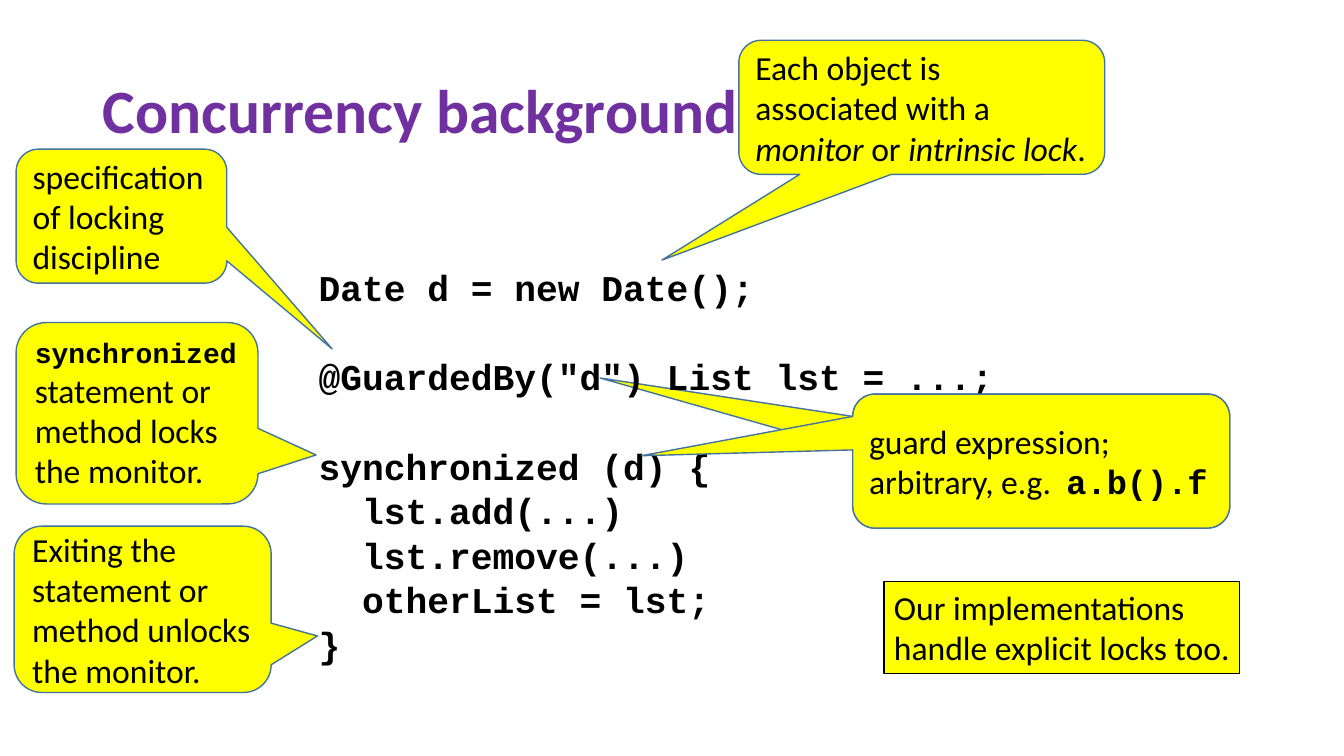
import pptx
import pptx.util
import pptx.dml.color
import pptx.enum.shapes
import pptx.enum.text
import lxml.etree

Pt = pptx.util.Pt
SHAPES = pptx.enum.shapes.MSO_SHAPE
ANCHOR = pptx.enum.text.MSO_ANCHOR
LEFT = pptx.enum.text.PP_ALIGN.LEFT

COLORS = {"title": "7030A0", "text": "000000", "note": "FFFF00", "outline": "43739E"}
PROSE, CODE = "Calibri", "Courier New"
CELL = pptx.util.Inches(0.1)  # the slide is a grid of 133.3 columns by 75 rows
CODE_SIZE = 25.9
CODE_LEADING = 0.7
CODE_GAP = 10
BLANK_LINE = 32
CODE_INDENT = 2 * 0.6 * CODE_SIZE  # two monospaced characters


def color(name):
    return pptx.dml.color.RGBColor.from_string(COLORS[name])


def write(paragraph, text, font=PROSE, size=24, ink="text", bold=False, italic=False):
    run = paragraph.add_run()
    run.text = text
    run.font.name = font
    run.font.size = Pt(size)
    run.font.bold = bold
    run.font.italic = italic
    run.font.color.rgb = color(ink)


deck = pptx.Presentation()
deck.slide_width = int(133.33 * CELL)
deck.slide_height = 75 * CELL
slide = deck.slides.add_slide(deck.slide_layouts[1])
title, code = slide.placeholders

# Title
title.left, title.top, title.width, title.height = (int(n * CELL) for n in (9.2, 4, 115, 14.5))
title.text_frame.vertical_anchor = ANCHOR.MIDDLE
heading = title.text_frame.paragraphs[0]
heading.alignment = LEFT
heading.line_spacing = 0.9
write(heading, "Concurrency background", size=44, ink="title", bold=True)

# Code: (indent level, starts a new block, text)
code_lines = [
    (0, False, "Date d = new Date();"),
    (0, True, '@GuardedBy("d") List lst = ...;'),
    (0, True, "synchronized (d) {"),
    (1, False, "lst.add(...)"),
    (1, False, "lst.remove(...)"),
    (1, False, "otherList = lst;"),
    (0, False, "}"),
]
code.left, code.top, code.width, code.height = (int(n * CELL) for n in (30.6, 21.5, 72.2, 47.6))
code.text_frame.auto_size = pptx.enum.text.MSO_AUTO_SIZE.NONE
code.text_frame.vertical_anchor = ANCHOR.TOP
code.text_frame.margin_top = 6 * CELL
for number, (level, new_block, text) in enumerate(code_lines):
    line = code.text_frame.add_paragraph() if number else code.text_frame.paragraphs[0]
    line.alignment = LEFT
    line.line_spacing = CODE_LEADING
    line.space_before = Pt(0 if number == 0 else CODE_GAP + BLANK_LINE * new_block)
    write(line, text, font=CODE, size=CODE_SIZE, bold=True)
    properties = line._p.get_or_add_pPr()
    properties.set("marL", str(int(Pt(level * CODE_INDENT))))
    properties.set("indent", "0")
    lxml.etree.SubElement(properties, pptx.oxml.ns.qn("a:buNone"))

# Notes: (place in cells, pointer tip or None for a plain box, paragraphs of runs)
mono = {"font": CODE, "bold": True}
italic = {"italic": True}
guard_place = (84.6, 39.1, 37.4, 13.3)
guard_text = [
    [("guard expression;", {})],
    [("arbitrary, e.g.  ", {}), ("a.b().f", mono)],
]
notes = [
    (guard_place, (-1.17, -0.62), guard_text),
    ((73.3, 4, 36.3, 13.3), (-0.71, 1.14), [[
        ("Each object is associated with a ", {}), ("monitor", italic),
        (" or ", {}), ("intrinsic lock", italic), (".", {})]]),
    ((1.6, 32, 24, 18), (0.74, 0.23), [[
        ("synchronized ", {**mono, "size": 20}),
        ("statement or method locks the monitor.", {})]]),
    ((1.4, 52.2, 25.5, 16.5), (0.68, 0.16), [[
        ("Exiting the statement or method unlocks the monitor.", {})]]),
    (guard_place, (-1.06, -0.04), guard_text),
    ((1.6, 14.8, 20.9, 13.3), (1, 0.99), [[
        ("specification of locking discipline", {})]]),
    ((87.7, 57.7, 35.3, 9.1), None, [[
        ("Our implementations handle explicit locks too.", {})]]),
]
drawn_notes = []
for place, tip, paragraphs in notes:
    preset = SHAPES.ROUNDED_RECTANGULAR_CALLOUT if tip else SHAPES.RECTANGLE
    note = slide.shapes.add_shape(preset, *(int(n * CELL) for n in place))
    if tip:
        note.adjustments[0], note.adjustments[1] = tip
    note.shadow.inherit = False
    note.fill.solid()
    note.fill.fore_color.rgb = color("note")
    note.line.color.rgb = color("outline" if tip else "text")
    note.line.width = Pt(1 if tip else 0.75)
    frame = note.text_frame
    frame.word_wrap = True
    frame.vertical_anchor = ANCHOR.MIDDLE if tip else ANCHOR.TOP
    for number, runs in enumerate(paragraphs):
        paragraph = frame.add_paragraph() if number else frame.paragraphs[0]
        paragraph.alignment = LEFT
        for text, style in runs:
            write(paragraph, text, **style)
    drawn_notes.append(note)

# The first guard pointer passes behind the code
title.element.addprevious(drawn_notes[0].element)

deck.save("out.pptx")
